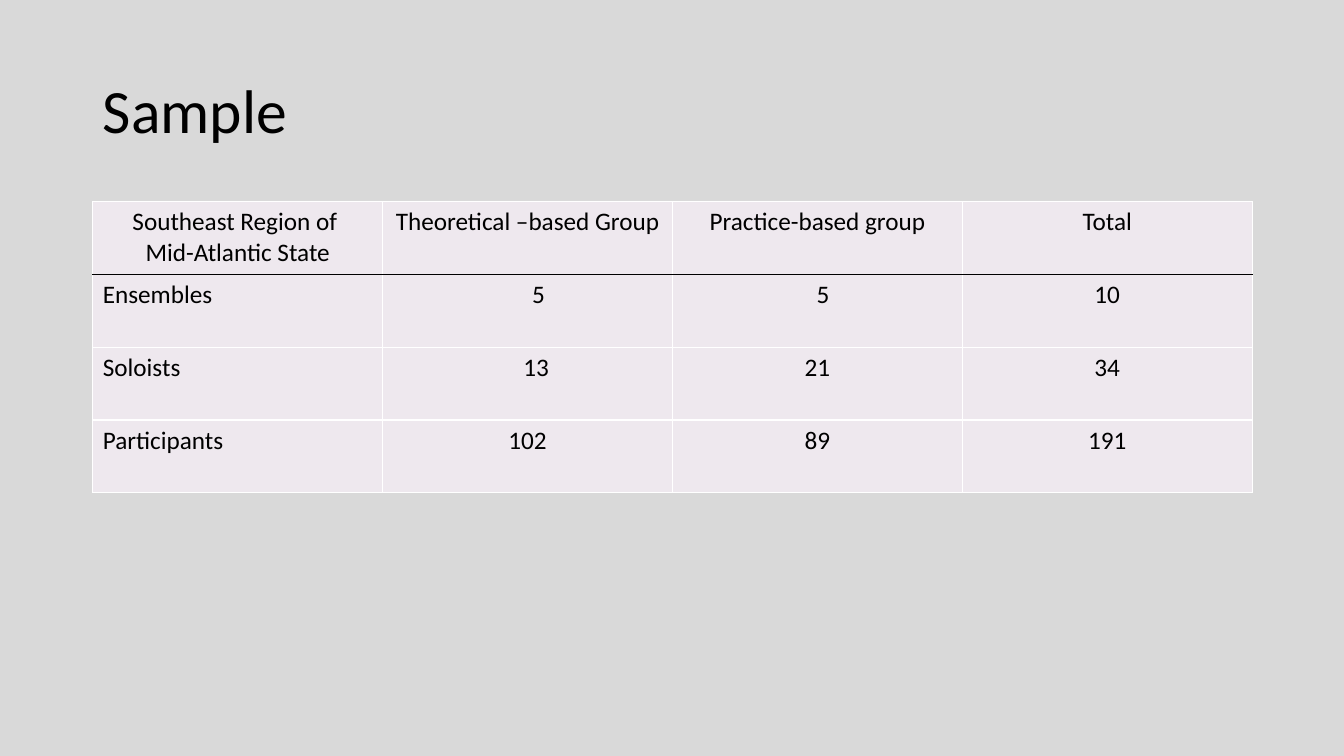
from lxml import etree
from pptx import Presentation
from pptx.dml.color import RGBColor
from pptx.enum.text import MSO_ANCHOR, PP_ALIGN
from pptx.oxml.ns import qn
from pptx.util import Inches, Pt

LEFT, CENTER = PP_ALIGN.LEFT, PP_ALIGN.CENTER
MIDDLE, TOP = MSO_ANCHOR.MIDDLE, MSO_ANCHOR.TOP
TITLE_ONLY = 5

HEADERS = [
    ["Southeast Region of ", "Mid-Atlantic State"],
    ["Theoretical –based Group"],
    ["Practice-based group"],
    ["Total"],
]
COUNTS = [
    ["Ensembles", "5", "5", "10"],
    ["Soloists", "13", "21", "34"],
    ["Participants", "102", "89", "191"],
]
# Extra left margin in inches, by (row, column)
INDENTS = {(1, 1): 0.22, (1, 2): 0.11, (2, 1): 0.17}


def colour(value):
    return RGBColor.from_string(value)


class SlideBuilder:
    font = "Calibri"
    ink = "000000"
    grid = "FFFFFF"
    cell_fill = "EEE8EE"
    backdrop = "D9D9D9"

    def __init__(self, page):
        self.page = page
        page.background.fill.solid()
        page.background.fill.fore_color.rgb = colour(self.backdrop)

    def add_lines(self, frame, lines, size, align):
        for number, line in enumerate(lines):
            para = frame.add_paragraph() if number else frame.paragraphs[0]
            para.alignment = align
            span = para.add_run()
            span.text = line
            span.font.name = self.font
            span.font.size = Pt(size)
            span.font.color.rgb = colour(self.ink)

    def title(self, text, left, top, width, height):
        box = self.page.shapes.title
        box.left, box.top = Inches(left), Inches(top)
        box.width, box.height = Inches(width), Inches(height)
        frame = box.text_frame
        frame.word_wrap = True
        frame.vertical_anchor = MIDDLE
        self.add_lines(frame, [text], 44, LEFT)
        frame.paragraphs[0].line_spacing = 0.9

    def borders(self, cell, top, bottom):
        properties = cell._tc.get_or_add_tcPr()
        sides = {"lnL": self.grid, "lnR": self.grid, "lnT": top, "lnB": bottom}
        for position, (side, value) in enumerate(sides.items()):
            line = etree.Element(qn(f"a:{side}"), w=str(Pt(1)))
            fill = etree.SubElement(line, qn("a:solidFill"))
            etree.SubElement(fill, qn("a:srgbClr"), val=value)
            properties.insert(position, line)

    def table(self, rows, left, top, width, height):
        row_count, column_count = len(rows), len(rows[0])
        holder = self.page.shapes.add_table(
            row_count, column_count,
            Inches(left), Inches(top), Inches(width), Inches(height))
        table = holder.table
        for r, row in enumerate(rows):
            for c, lines in enumerate(row):
                cell = table.cell(r, c)
                cell.vertical_anchor = TOP
                cell.margin_left = Inches(0.1 + INDENTS.get((r, c), 0))
                cell.fill.solid()
                cell.fill.fore_color.rgb = colour(self.cell_fill)
                # The header row is ruled off in black
                self.borders(cell,
                             top=self.ink if r == 1 else self.grid,
                             bottom=self.ink if r == 0 else self.grid)
                align = LEFT if r and c == 0 else CENTER
                self.add_lines(cell.text_frame, lines, 18, align)


def main():
    deck = Presentation()
    deck.slide_width, deck.slide_height = Inches(13.33), Inches(7.5)
    page = deck.slides.add_slide(deck.slide_layouts[TITLE_ONLY])
    builder = SlideBuilder(page)

    # Title
    builder.title("Sample", 0.92, 0.4, 11.5, 1.45)

    # Sample sizes by group
    rows = [HEADERS] + [[[text] for text in row] for row in COUNTS]
    builder.table(rows, 0.92, 2, 11.5, 2.89)

    deck.save("out.pptx")


if __name__ == "__main__":
    main()
